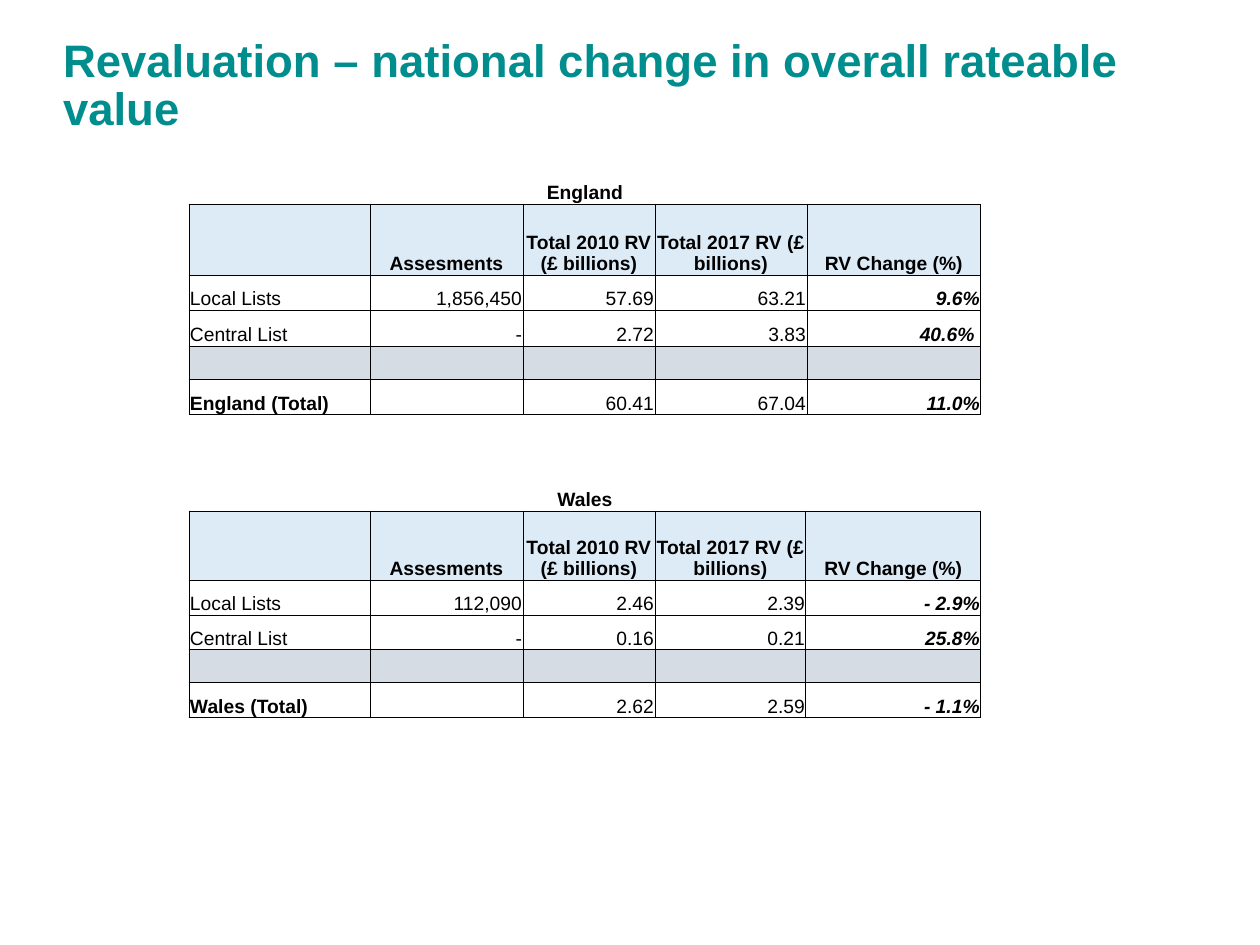
"""Build a slide comparing rateable value changes in England and Wales."""
from dataclasses import dataclass

from lxml.etree import SubElement
from pptx import Presentation
from pptx.dml.color import RGBColor
from pptx.enum.text import MSO_ANCHOR as Anchor, MSO_AUTO_SIZE as AutoSize, PP_ALIGN as Align
from pptx.oxml.ns import qn
from pptx.util import Pt


@dataclass(frozen=True)
class Theme:
    font: str = "Arial"
    title: str = "008D8E"
    ink: str = "000000"
    header: str = "DDEBF7"
    divider: str = "D6DCE4"
    title_size: int = 26
    title_leading: int = 27
    table_size: int = 11
    border: float = 0.5


THEME = Theme()
SCALE = 914400 / 126
HEADINGS = ["", "Assesments", "Total 2010 RV (£ billions)", "Total 2017 RV (£ billions)", "RV Change (%)"]
TABLES = [
    {
        "region": "England",
        "top": 161,
        "columns": [181, 153, 132, 152, 174],
        "heights": [43, 71, 35, 36, 34, 35],
        "local": ["1,856,450", "57.69", "63.21", "9.6%"],
        "central": ["-", "2.72", "3.83", "40.6% "],
        "total": ["", "60.41", "67.04", "11.0%"],
    },
    {
        "region": "Wales",
        "top": 470,
        "columns": [181, 153, 132, 151, 175],
        "heights": [41, 69, 35, 35, 33, 35],
        "local": ["112,090", "2.46", "2.39", "- 2.9%"],
        "central": ["-", "0.16", "0.21", "25.8%"],
        "total": ["", "2.62", "2.59", "- 1.1%"],
    },
]


def px(length):
    return round(length * SCALE)


def set_borders(cell, visible):
    properties = cell._tc.get_or_add_tcPr()
    for side in ("lnL", "lnR", "lnT", "lnB"):
        line = SubElement(properties, qn(f"a:{side}"), w=str(Pt(THEME.border)))
        if side in visible:
            fill = SubElement(line, qn("a:solidFill"))
            SubElement(fill, qn("a:srgbClr"), val=THEME.ink)
        else:
            SubElement(line, qn("a:noFill"))


presentation = Presentation()
presentation.slide_width = px(1260)
presentation.slide_height = px(945)
slide = presentation.slides.add_slide(presentation.slide_layouts[5])

title = slide.shapes.title
title.left, title.top, title.width, title.height = px(63), px(36), px(1134), px(102)
frame = title.text_frame
frame.margin_left = frame.margin_right = frame.margin_top = frame.margin_bottom = 0
frame.word_wrap = True
frame.auto_size = AutoSize.NONE
frame.vertical_anchor = Anchor.MIDDLE
frame.text = "Revaluation – national change in overall rateable value"
paragraph = frame.paragraphs[0]
paragraph.alignment = Align.LEFT
paragraph.line_spacing = Pt(THEME.title_leading)
paragraph.font.name = THEME.font
paragraph.font.size = Pt(THEME.title_size)
paragraph.font.bold = True
paragraph.font.color.rgb = RGBColor.from_string(THEME.title)

for data in TABLES:
    columns, heights, region = data["columns"], data["heights"], data["region"]
    rows = [
        [region, "", "", "", ""],
        HEADINGS,
        ["Local Lists", *data["local"]],
        ["Central List", *data["central"]],
        [""] * len(columns),
        [f"{region} (Total)", *data["total"]],
    ]
    table = slide.shapes.add_table(
        len(rows), len(columns), px(189), px(data["top"]), px(sum(columns)), px(sum(heights))
    ).table
    table.first_row = table.horz_banding = False
    for column, width in zip(table.columns, columns):
        column.width = px(width)
    for row, height in zip(table.rows, heights):
        row.height = px(height)
    table.cell(0, 0).merge(table.cell(0, len(columns) - 1))

    for row_index, values in enumerate(rows):
        for column_index, value in enumerate(values):
            cell = table.cell(row_index, column_index)
            cell.margin_left = cell.margin_right = cell.margin_top = px(1)
            cell.margin_bottom = 0
            cell.vertical_anchor = Anchor.BOTTOM
            set_borders(cell, ("lnB",) if row_index == 0 else ("lnL", "lnR", "lnT", "lnB"))
            fill_color = {1: THEME.header, 4: THEME.divider}.get(row_index)
            if fill_color:
                cell.fill.solid()
                cell.fill.fore_color.rgb = RGBColor.from_string(fill_color)
            else:
                cell.fill.background()

            paragraph = cell.text_frame.paragraphs[0]
            if value:
                cell.text = value
                paragraph = cell.text_frame.paragraphs[0]
            else:
                SubElement(paragraph._p, qn("a:endParaRPr"), sz=str(THEME.table_size * 100))
            if row_index < 2:
                paragraph.alignment = Align.CENTER
            else:
                paragraph.alignment = Align.RIGHT if column_index else Align.LEFT
            is_change = row_index > 1 and column_index == 4
            is_total_label = row_index == 5 and column_index == 0
            paragraph.font.name = THEME.font
            paragraph.font.size = Pt(THEME.table_size)
            paragraph.font.bold = row_index < 2 or is_change or is_total_label
            paragraph.font.italic = is_change
            paragraph.font.color.rgb = RGBColor.from_string(THEME.ink)

presentation.save("out.pptx")
